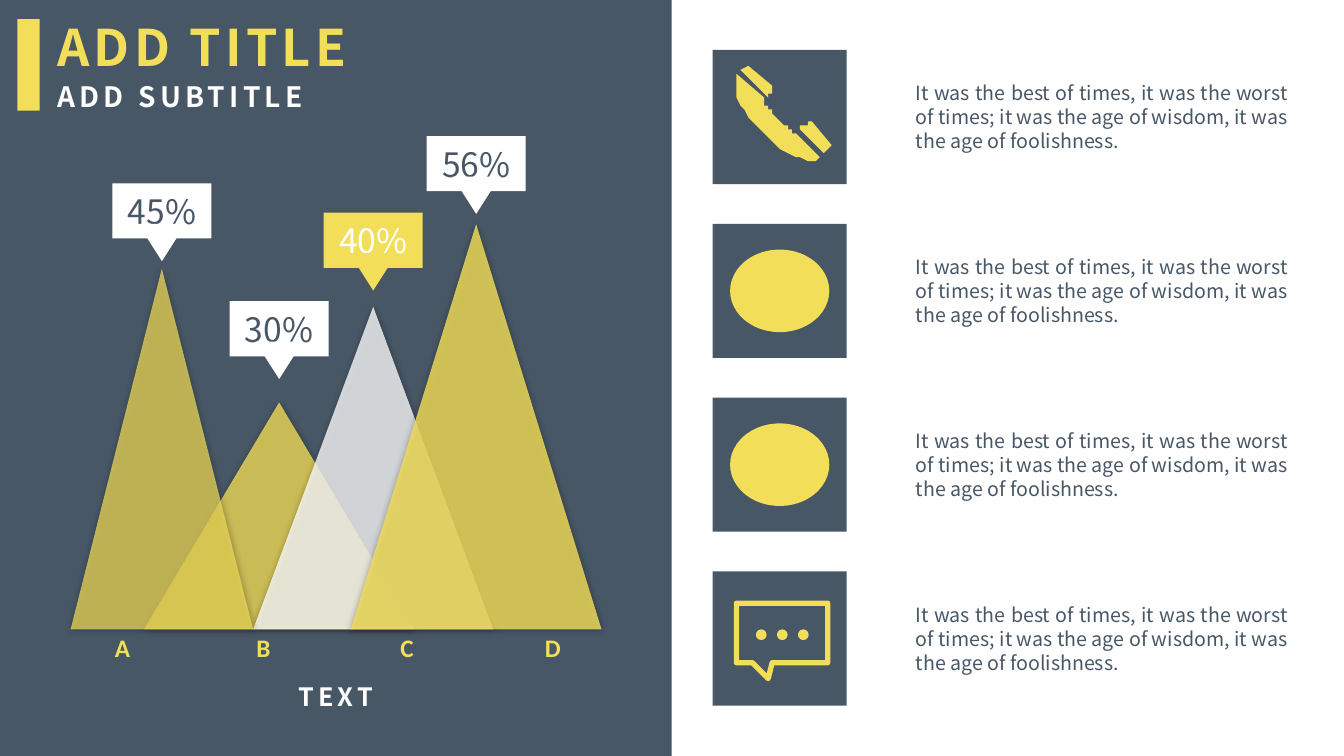
from dataclasses import dataclass

from lxml import etree
from pptx import Presentation
from pptx import util as u
from pptx.dml.color import RGBColor
from pptx.enum import shapes, text
from pptx.oxml import ns

Cm, Pt = u.Cm, u.Pt
KIND = shapes.MSO_SHAPE
SIDE = text.PP_ALIGN


@dataclass(frozen=True)
class Theme:
    """Colours, fonts and type sizes of the slide."""
    slate: str = "485766"
    gold: str = "F3DE5A"
    white: str = "FFFFFF"
    sans: str = "Noto Sans CJK SC"
    plain: str = "Calibri"
    title: int = 36
    sub: int = 20
    tag: int = 24
    label: int = 18
    body: int = 14
    lead: float = 1.22


T = Theme()
BODY = ("It was the best of times, it was the worst of times; "
        "it was the age of wisdom, it was the age of foolishness.")
PEAKS = [
    ("30%", 3.63, 6.81, 5.72, T.gold, 79, 7.59, T.white, T.slate),
    ("40%", 6.38, 6.05, 8.13, T.white, 78, 5.36, T.gold, T.white),
    ("56%", 8.84, 6.32, 10.21, T.gold, 82, 3.43, T.white, T.slate),
    ("45%", 1.78, 4.6, 9.09, T.gold, 72, 4.62, T.white, T.slate),
]
LABELS = {"A": 3.09, "B": 6.64, "C": 10.26, "D": 13.93}
PHONE = [
    [(27.9, 26.4), (21.6, 20.1), (22.4, 19.3, 23.6, 18, 24.6, 18.5),
     (30, 23.9)],
    [(13.5, 11.9), (6.9, 5.3), (9.4, 3.6), (14.7, 8.9),
     (15.5, 9.9, 14.2, 11.2, 13.5, 11.9)],
    [(13, 12.4), (13, 12.7, 13, 13.7, 16.8, 17.5),
     (19.6, 20.3, 20.8, 20.8, 21.1, 20.6), (27.4, 26.9),
     (26.7, 27.7, 22.6, 30, 13.2, 21.3), (3.8, 12.7, 5.6, 7.1, 6.4, 5.8)],
]
BUBBLE = [[(6.2, 8.5), (28.8, 8.5), (28.8, 23.1), (15, 23.1),
           (14.1, 26.7), (10.2, 23.1), (6.2, 23.1)]]


def paint(item, fill):
    """Give a shape a flat fill with no line and no shadow."""
    item.shadow.inherit = False
    item.fill.solid()
    item.fill.fore_color.rgb = RGBColor.from_string(fill)
    item.line.fill.background()
    return item


def block(slide, kind, box, fill):
    """Add a flat preset shape in a box of centimetres."""
    return paint(slide.shapes.add_shape(kind, *map(Cm, box)), fill)


def write(item, words, size, color, align=SIDE.CENTER, name=T.sans,
          bold=False, gap=0):
    """Write one paragraph into a shape or text box."""
    frame = item.text_frame
    frame.word_wrap = True
    para = frame.paragraphs[0]
    run = para.add_run()
    run.text = words
    looks = {
        para: {"alignment": align, "line_spacing": Pt(round(size * T.lead))},
        run.font: {"size": Pt(size), "name": name, "bold": bold},
    }
    for part, values in looks.items():
        for key, value in values.items():
            setattr(part, key, value)
    run.font.color.rgb = RGBColor.from_string(color)
    if gap:
        run._r.get_or_add_rPr().set("spc", str(gap * 100))


def note(slide, box, *args, **style):
    """Add a text box in a box of centimetres."""
    write(slide.shapes.add_textbox(*map(Cm, box)), *args, **style)


def add(node, tag, **values):
    """Append a drawing element to a node."""
    return etree.SubElement(node, ns.qn(tag), values)


def glaze(item, alpha):
    """Make a fill see-through and add a soft dark shadow."""
    props = item._element.spPr
    fill = props.find(ns.qn("a:solidFill"))
    add(fill[0], "a:alpha", val=str(alpha * 1000))
    glow = add(props.find(ns.qn("a:effectLst")), "a:outerShdw",
               blurRad=str(Pt(5)), dist="0", dir="0", rotWithShape="0")
    add(add(glow, "a:srgbClr", val="000000"), "a:alpha", val="40000")


def bend(start, curve, steps=12):
    """Return points along a cubic curve."""
    ends = [start, curve[:2], curve[2:4], curve[4:]]
    points = []
    for step in range(1, steps + 1):
        t = step / steps
        mix = ((1 - t) ** 3, 3 * t * (1 - t) ** 2, 3 * t * t * (1 - t), t ** 3)
        points.append(tuple(sum(m * end[axis] for m, end in zip(mix, ends))
                            for axis in (0, 1)))
    return points


def trace(slide, left, top, loops):
    """Draw closed loops given in millimetres from a corner."""
    pen = slide.shapes.build_freeform(*loops[0][0], scale=Cm(0.1))
    for loop in loops:
        last = loop[0]
        pen.move_to(*last)
        points = []
        for node in loop[1:]:
            points += [node] if len(node) == 2 else bend(last, node)
            last = points[-1]
        pen.add_line_segments(points, close=True)
    return paint(pen.convert_to_shape(Cm(left), Cm(top)), T.gold)


def phone(slide, left, top):
    """Draw the handset."""
    trace(slide, left, top, PHONE)


def disc(slide, left, top):
    """Draw a plain oval."""
    block(slide, KIND.OVAL, (left + 0.44, top + 0.65, 2.5, 2.08), T.gold)


def chat(slide, left, top):
    """Draw the speech bubble with three dots."""
    item = trace(slide, left, top, BUBBLE)
    item.fill.background()
    item.line.color.rgb = RGBColor.from_string(T.gold)
    item.line.width = Pt(3.8)
    add(item._element.spPr.find(ns.qn("a:ln")), "a:round")
    for spot in range(3):
        box = (left + 1.09 + spot * 0.53, top + 1.46, 0.27, 0.27)
        block(slide, KIND.OVAL, box, T.gold)


def chart(slide, left, top):
    """Draw the peaks, their tags and the axis labels."""
    base = top + 15.86
    for _, x, wide, high, fill, alpha, *_ in PEAKS:
        box = (left + x, base - high, wide, high)
        glaze(block(slide, KIND.ISOSCELES_TRIANGLE, box, fill), alpha)
    for words, x, wide, _, _, _, y, fill, ink in PEAKS:
        mid = left + x + wide / 2
        box = (mid - 1.25, top + y, 2.5, 1.39)
        write(block(slide, KIND.RECTANGLE, box, fill), words, T.tag, ink)
        box = (mid - 0.6, top + y + 1.02, 1.2, 0.94)
        block(slide, KIND.ISOSCELES_TRIANGLE, box, fill).rotation = 180
    for words, mid in LABELS.items():
        note(slide, (left + mid - 0.65, top + 15.8, 1.3, 1.02), words,
             T.label, T.gold, name=T.plain, bold=True)
    note(slide, (left + 6.35, top + 17.02, 4.22, 1.02), "TEXT",
         T.label, T.white, bold=True, gap=3)


def header(slide, left, top):
    """Place the title, the subtitle and the bar beside them."""
    style = {"align": SIDE.LEFT, "bold": True, "gap": 3}
    note(slide, (left + 0.76, top - 0.23, 8.81, 1.8), "ADD TITLE",
         T.title, T.gold, **style)
    note(slide, (left + 0.76, top + 1.4, 7.29, 1.12), "ADD SUBTITLE",
         T.sub, T.white, **style)
    block(slide, KIND.RECTANGLE, (left, top, 0.56, 2.31), T.gold)


def points(slide, left, top, pitch):
    """Stack icon tiles with a paragraph beside each."""
    for row, icon in enumerate((phone, disc, disc, chat)):
        y = top + row * pitch
        block(slide, KIND.RECTANGLE, (left, y, 3.38, 3.38), T.slate)
        icon(slide, left, y)
        note(slide, (left + 4.87, y + 0.66, 9.88, 2.06), BODY,
             T.body, T.slate, align=SIDE.JUSTIFY)


def main():
    """Build the slide and save it."""
    deck = Presentation()
    deck.slide_width, deck.slide_height = Cm(33.87), Cm(19.05)
    slide = deck.slides.add_slide(deck.slide_layouts[6])
    block(slide, KIND.RECTANGLE, (0, 0, 16.93, 19.05), T.slate)
    chart(slide, 0, 0)
    points(slide, 17.96, 1.26, 4.38)
    header(slide, 0.44, 0.48)
    deck.save("out.pptx")


if __name__ == "__main__":
    main()
